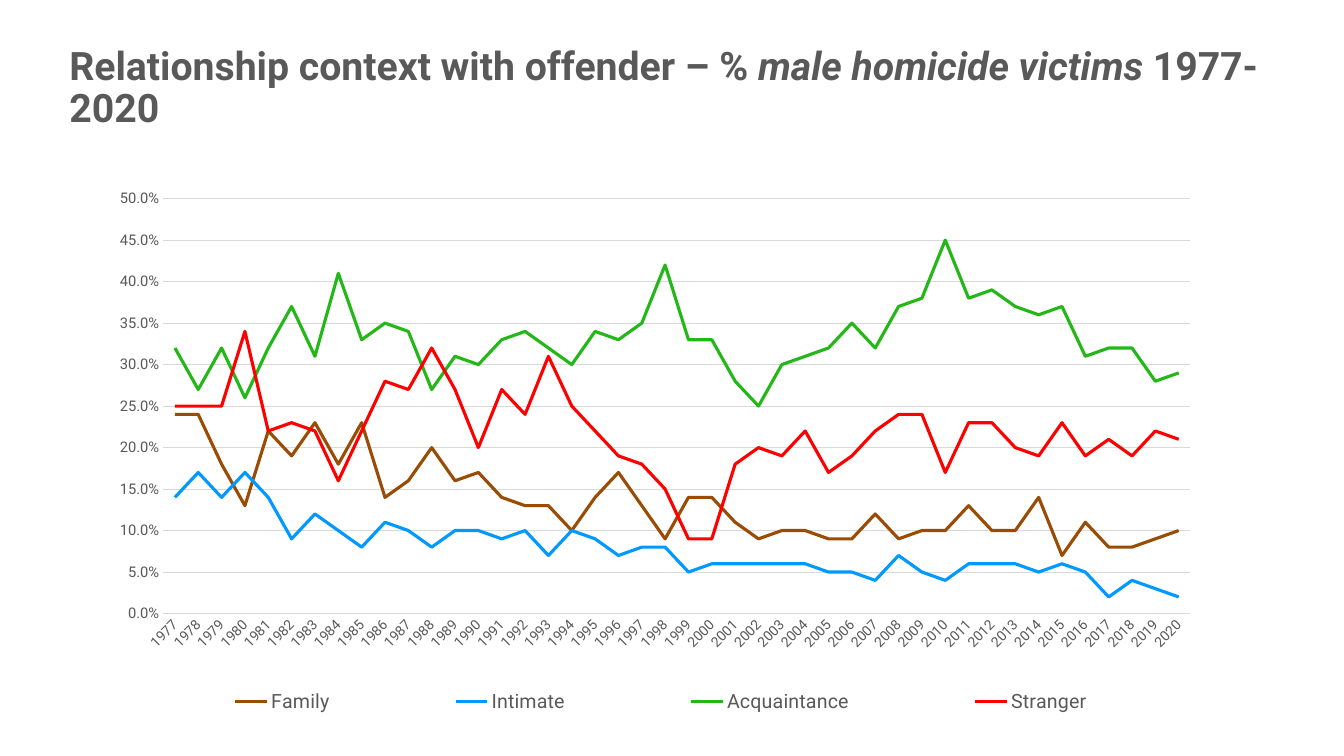
from lxml import etree
from pptx import Presentation
from pptx import util as u
from pptx.chart import data as cd
from pptx.dml.color import RGBColor
from pptx.enum import chart as ch, text
from pptx.oxml import ns

WIDTH, HEIGHT = 13.33, 7.5
FONT = "Roboto"
GREY = RGBColor(0x59, 0x59, 0x59)
GRID = RGBColor(0xD9, 0xD9, 0xD9)
BROWN = RGBColor(0x9A, 0x4C, 0x04)
BLUE = RGBColor(0x00, 0x99, 0xFF)
GREEN = RGBColor(0x23, 0xB8, 0x18)
RED = RGBColor(0xFF, 0x00, 0x00)

YEARS = [str(year) for year in range(1977, 2021)]
PERCENTAGES = {
    "Family": (BROWN, [
        24, 24, 18, 13, 22, 19, 23, 18, 23, 14, 16, 20, 16, 17, 14,
        13, 13, 10, 14, 17, 13, 9, 14, 14, 11, 9, 10, 10, 9, 9,
        12, 9, 10, 10, 13, 10, 10, 14, 7, 11, 8, 8, 9, 10]),
    "Intimate": (BLUE, [
        14, 17, 14, 17, 14, 9, 12, 10, 8, 11, 10, 8, 10, 10, 9,
        10, 7, 10, 9, 7, 8, 8, 5, 6, 6, 6, 6, 6, 5, 5,
        4, 7, 5, 4, 6, 6, 6, 5, 6, 5, 2, 4, 3, 2]),
    "Acquaintance": (GREEN, [
        32, 27, 32, 26, 32, 37, 31, 41, 33, 35, 34, 27, 31, 30, 33,
        34, 32, 30, 34, 33, 35, 42, 33, 33, 28, 25, 30, 31, 32, 35,
        32, 37, 38, 45, 38, 39, 37, 36, 37, 31, 32, 32, 28, 29]),
    "Stranger": (RED, [
        25, 25, 25, 34, 22, 23, 22, 16, 22, 28, 27, 32, 27, 20, 27,
        24, 31, 25, 22, 19, 18, 15, 9, 9, 18, 20, 19, 22, 17, 19,
        22, 24, 24, 17, 23, 23, 20, 19, 23, 19, 21, 19, 22, 21]),
}


def share(left, top, width, height):
    return (u.Inches(WIDTH * left / 100), u.Inches(HEIGHT * top / 100),
            u.Inches(WIDTH * width / 100), u.Inches(HEIGHT * height / 100))


def style_font(font, size):
    font.name = FONT
    font.size = u.Pt(size)
    font.color.rgb = GREY


def style_line(line, color, width):
    line.color.rgb = color
    line.width = u.Pt(width)


def add_title(s, box, runs):
    tf = s.shapes.add_textbox(*box).text_frame
    tf.word_wrap = True
    tf.vertical_anchor = text.MSO_ANCHOR.TOP
    p = tf.paragraphs[0]
    p.line_spacing = 0.9
    for words, italic in runs:
        r = p.add_run()
        r.text = words
        style_font(r.font, 28)
        r.font.bold = True
        r.font.italic = italic


def place(parent, position, left, top, width, height, inner=False):
    for old in parent.findall(ns.qn("c:layout")):
        parent.remove(old)
    layout = etree.Element(ns.qn("c:layout"))
    manual = etree.SubElement(layout, ns.qn("c:manualLayout"))
    settings = [("layoutTarget", "inner")] if inner else []
    settings += [("xMode", "edge"), ("yMode", "edge")]
    settings += [(tag, round(percent / 100, 4)) for tag, percent in
                 zip("xywh", (left, top, width, height))]
    for tag, value in settings:
        etree.SubElement(manual, ns.qn("c:" + tag)).set("val", str(value))
    parent.insert(position, layout)


def style_axis(axis, size):
    axis.major_tick_mark = axis.minor_tick_mark = ch.XL_TICK_MARK.NONE
    style_font(axis.tick_labels.font, size)


def add_line_chart(s, box):
    data = cd.CategoryChartData(number_format="###0.0%")
    data.categories = YEARS
    for name, (_, values) in PERCENTAGES.items():
        data.add_series(name, [v / 100 for v in values])
    chart = s.shapes.add_chart(ch.XL_CHART_TYPE.LINE, *box, data).chart
    chart.has_title = False
    style_font(chart.font, 10)

    for series, (color, _) in zip(chart.plots[0].series, PERCENTAGES.values()):
        series.smooth = False
        series.marker.style = ch.XL_MARKER_STYLE.NONE
        style_line(series.format.line, color, 2.25)

    years = chart.category_axis
    style_axis(years, 10)
    style_line(years.format.line, GRID, 0.75)
    years._element.find(ns.qn("c:txPr")).find(ns.qn("a:bodyPr")).set("rot", "-2700000")

    rates = chart.value_axis
    style_axis(rates, 10.5)
    rates.minimum_scale, rates.maximum_scale, rates.major_unit = 0, 0.5, 0.05
    rates.tick_labels.number_format = "###0.0%"
    rates.tick_labels.number_format_is_linked = False
    rates.format.line.fill.background()
    style_line(rates.major_gridlines.format.line, GRID, 0.75)

    chart.has_legend = True
    legend = chart.legend
    legend.position = ch.XL_LEGEND_POSITION.BOTTOM
    legend.include_in_layout = False
    style_font(legend.font, 14)
    place(legend._element, 1, 3.6, 89.7, 96, 8)
    plot_area = chart._chartSpace.find(ns.qn("c:chart")).find(ns.qn("c:plotArea"))
    place(plot_area, 0, 7.8, 3.45, 90.4, 74.45, inner=True)


def main():
    prs = Presentation()
    prs.slide_width, prs.slide_height = u.Inches(WIDTH), u.Inches(HEIGHT)
    s = prs.slides.add_slide(prs.slide_layouts[6])
    add_title(s, share(4.43, 5.47, 95.57, 20), [
        ("Relationship context with offender – % ", False),
        ("male homicide victims ", True),
        ("1977-2020", False)])
    add_line_chart(s, share(5.55, 23.73, 84.55, 73.73))
    prs.save("out.pptx")


if __name__ == "__main__":
    main()
